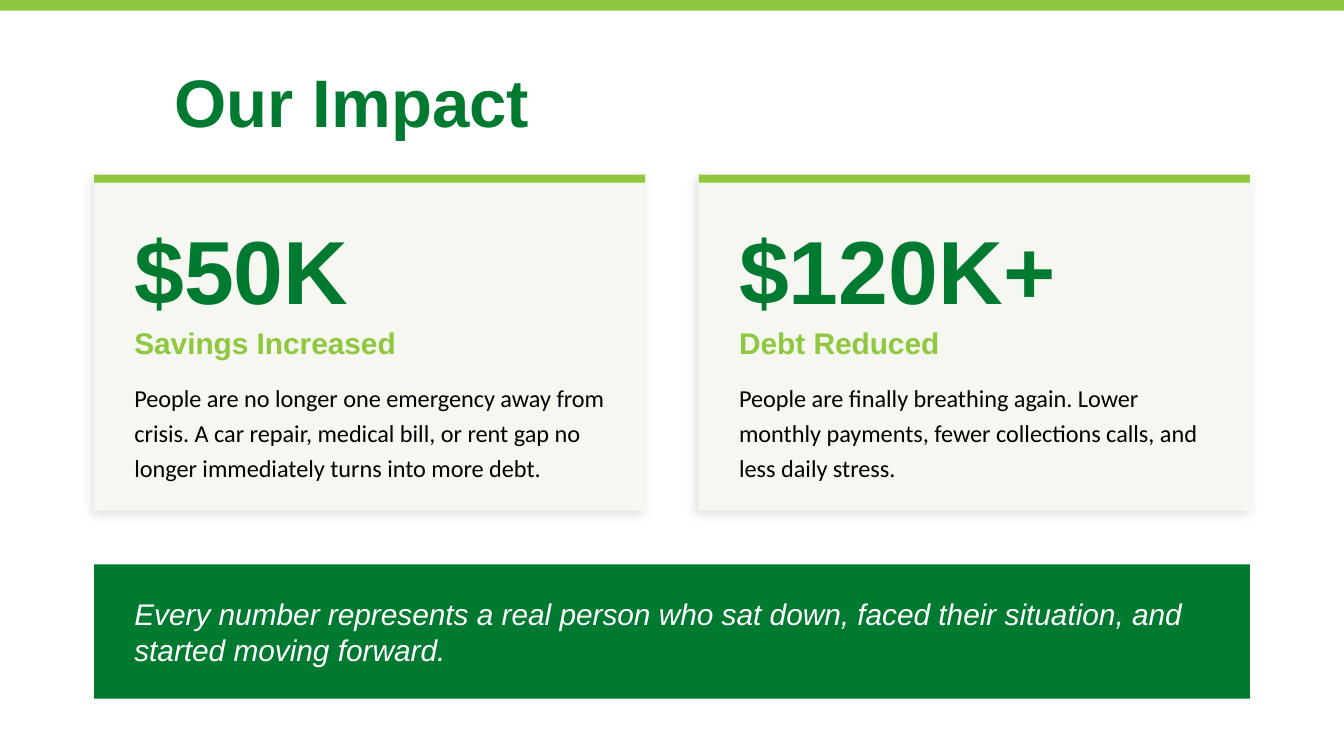
from lxml.etree import SubElement
from pptx import Presentation
from pptx.dml.color import RGBColor
from pptx.enum.shapes import MSO_SHAPE as Shape
from pptx.enum.text import MSO_ANCHOR as Anchor, MSO_AUTO_SIZE as AutoSize, PP_ALIGN as Align
from pptx.oxml.ns import qn
from pptx.util import Inches, Pt

COLORS = {
    "dark_green": "007A30",
    "lime": "8FC73E",
    "card": "F5F7F0",
    "black": "000000",
    "white": "FFFFFF",
}

CARDS = [
    ("$50K", "Savings Increased",
     "People are no longer one emergency away from crisis. A car repair, "
     "medical bill, or rent gap no longer immediately turns into more debt."),
    ("$120K+", "Debt Reduced",
     "People are finally breathing again. Lower monthly payments, "
     "fewer collections calls, and less daily stress."),
]

PAGE_WIDTH = 10
MARGIN, PADDING = 0.7, 0.3
CARD_TOP, CARD_WIDTH, CARD_HEIGHT, CARD_GAP = 1.3, 4.1, 2.5, 0.4


def color(name):
    return RGBColor.from_string(COLORS[name])


def add_block(page, left, top, width, height, fill):
    block = page.shapes.add_shape(
        Shape.RECTANGLE, Inches(left), Inches(top), Inches(width), Inches(height))
    block.shadow.inherit = False
    block.fill.solid()
    block.fill.fore_color.rgb = color(fill)
    block.line.fill.background()
    return block


def add_soft_shadow(block):
    effects = block._element.spPr.find(qn("a:effectLst"))
    shadow = SubElement(effects, qn("a:outerShdw"), blurRad=str(Pt(6)),
                        dist=str(Pt(2)), dir=str(135 * 60000),
                        algn="bl", rotWithShape="0")
    tint = SubElement(shadow, qn("a:srgbClr"), val=COLORS["black"])
    SubElement(tint, qn("a:alpha"), val="12000")


def write_text(box, text, size, fill, font="Arial", bold=False, italic=False, spacing=None):
    frame = box.text_frame
    frame.word_wrap = True
    frame.auto_size = AutoSize.NONE
    frame.vertical_anchor = Anchor.MIDDLE
    frame.margin_left = frame.margin_right = frame.margin_top = frame.margin_bottom = 0
    para = frame.paragraphs[0]
    para.text = text
    para.alignment = Align.LEFT
    if spacing:
        para.line_spacing = spacing
    para.font.name = font
    para.font.size = Pt(size)
    para.font.bold = bold
    para.font.italic = italic
    para.font.color.rgb = color(fill)


def add_text(page, left, top, width, height, text, size, fill, **style):
    box = page.shapes.add_textbox(
        Inches(left), Inches(top), Inches(width), Inches(height))
    write_text(box, text, size, fill, **style)


def set_title(page, text):
    title = page.shapes.title
    title.left, title.top = Inches(1.3), Inches(0.4)
    title.width, title.height = Inches(7), Inches(0.7)
    write_text(title, text, 36, "dark_green", bold=True)


def add_card(page, left, figure, label, story):
    # Panel with an accent strip along its top edge
    add_soft_shadow(add_block(page, left, CARD_TOP, CARD_WIDTH, CARD_HEIGHT, "card"))
    add_block(page, left, CARD_TOP, CARD_WIDTH, 0.06, "lime")

    # Figure, label and story
    text_left, text_width = left + PADDING, CARD_WIDTH - 2 * PADDING
    add_text(page, text_left, 1.6, text_width, 0.8, figure, 48, "dark_green", bold=True)
    add_text(page, text_left, 2.35, text_width, 0.4, label, 16, "lime", bold=True)
    add_text(page, text_left, 2.8, text_width, 0.8, story, 13, "black",
             font="Calibri", spacing=1.2)


def add_banner(page, text):
    width = 2 * CARD_WIDTH + CARD_GAP
    add_block(page, MARGIN, 4.2, width, 1, "dark_green")
    add_text(page, MARGIN + PADDING, 4.2, width - 2 * PADDING, 1, text, 16, "white",
             italic=True)


def main():
    # Widescreen page, 16:9
    deck = Presentation()
    deck.slide_width = Inches(PAGE_WIDTH)
    deck.slide_height = Inches(PAGE_WIDTH * 9 / 16)
    page = deck.slides.add_slide(deck.slide_layouts[5])

    # Top strip and title
    add_block(page, 0, 0, PAGE_WIDTH, 0.08, "lime")
    set_title(page, "Our Impact")

    # Impact cards
    for index, card in enumerate(CARDS):
        add_card(page, MARGIN + index * (CARD_WIDTH + CARD_GAP), *card)

    # Closing message
    add_banner(page, "Every number represents a real person who sat down, "
                     "faced their situation, and started moving forward.")

    deck.save("out.pptx")


if __name__ == "__main__":
    main()
